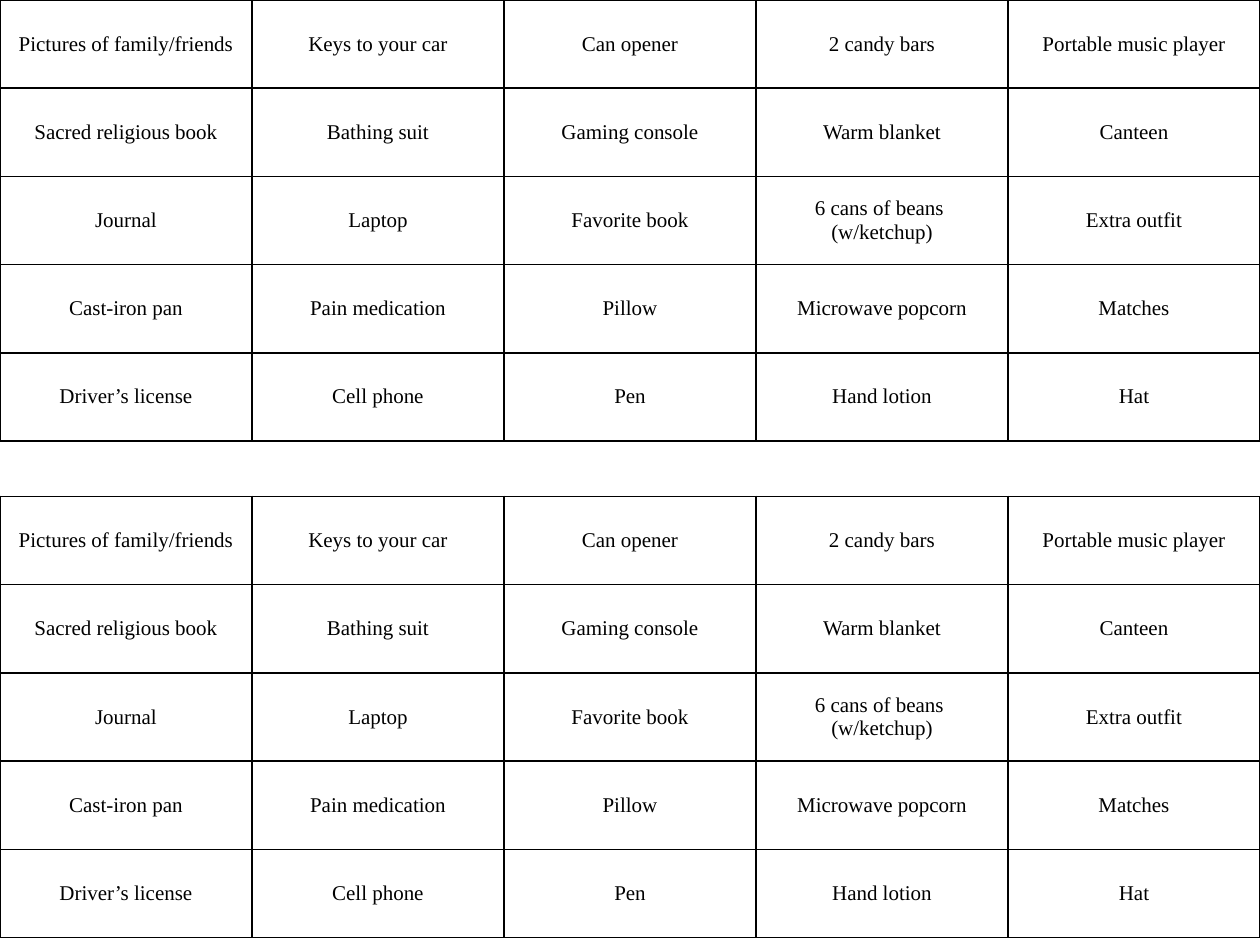
"""Build a slide with two identical cut-out tables of survival items."""
from dataclasses import dataclass

from lxml.etree import SubElement
from pptx import Presentation
from pptx.dml.color import RGBColor
from pptx.enum.text import MSO_ANCHOR, PP_ALIGN
from pptx.oxml.ns import qn
from pptx.slide import Slide
from pptx.table import _Cell
from pptx.util import Inches, Pt

COLORS = {"text": "000000", "border": "000000"}
FONT_FORMAT = {"name": "Times New Roman", "size": Pt(12), "bold": False}
BORDER_WIDTH = Pt(1)
COLUMN_WIDTH = Inches(2)
ROW_HEIGHT = Inches(0.7)

ITEMS = [
    ["Pictures of family/friends", "Keys to your car", "Can opener",
     "2 candy bars", "Portable music player"],
    ["Sacred religious book", "Bathing suit", "Gaming console",
     "Warm blanket", "Canteen"],
    ["Journal", "Laptop", "Favorite book",
     "6 cans of beans \n(w/ketchup)", "Extra outfit"],
    ["Cast-iron pan", "Pain medication", "Pillow",
     "Microwave popcorn", "Matches"],
    ["Driver’s license", "Cell phone", "Pen", "Hand lotion", "Hat"],
]


@dataclass
class ItemTable:
    top: float
    rows: list[list[str]]


def add_borders(cell: _Cell) -> None:
    properties = cell._tc.get_or_add_tcPr()
    for side in ("lnL", "lnR", "lnT", "lnB"):
        line = SubElement(properties, qn(f"a:{side}"), w=str(BORDER_WIDTH))
        fill = SubElement(line, qn("a:solidFill"))
        SubElement(fill, qn("a:srgbClr"), val=COLORS["border"])


def fill_cell(cell: _Cell, text: str) -> None:
    cell.text = text
    cell.vertical_anchor = MSO_ANCHOR.MIDDLE
    for para in cell.text_frame.paragraphs:
        para.alignment = PP_ALIGN.CENTER
        for span in para.runs:
            for name, value in FONT_FORMAT.items():
                setattr(span.font, name, value)
            span.font.color.rgb = RGBColor.from_string(COLORS["text"])
    add_borders(cell)
    cell.fill.background()


def draw_table(page: Slide, items: ItemTable) -> None:
    row_count, column_count = len(items.rows), len(items.rows[0])
    table = page.shapes.add_table(
        row_count, column_count, Inches(0), Inches(items.top),
        COLUMN_WIDTH * column_count, ROW_HEIGHT * row_count,
    ).table
    table.first_row = table.horz_banding = False
    for row, texts in zip(table.rows, items.rows):
        for cell, text in zip(row.cells, texts):
            fill_cell(cell, text)


def main() -> None:
    deck = Presentation()
    deck.slide_width, deck.slide_height = Inches(10), Inches(7.5)
    page = deck.slides.add_slide(deck.slide_layouts[6])
    for items in (ItemTable(0, ITEMS), ItemTable(3.94, ITEMS)):
        draw_table(page, items)
    deck.save("out.pptx")


if __name__ == "__main__":
    main()
